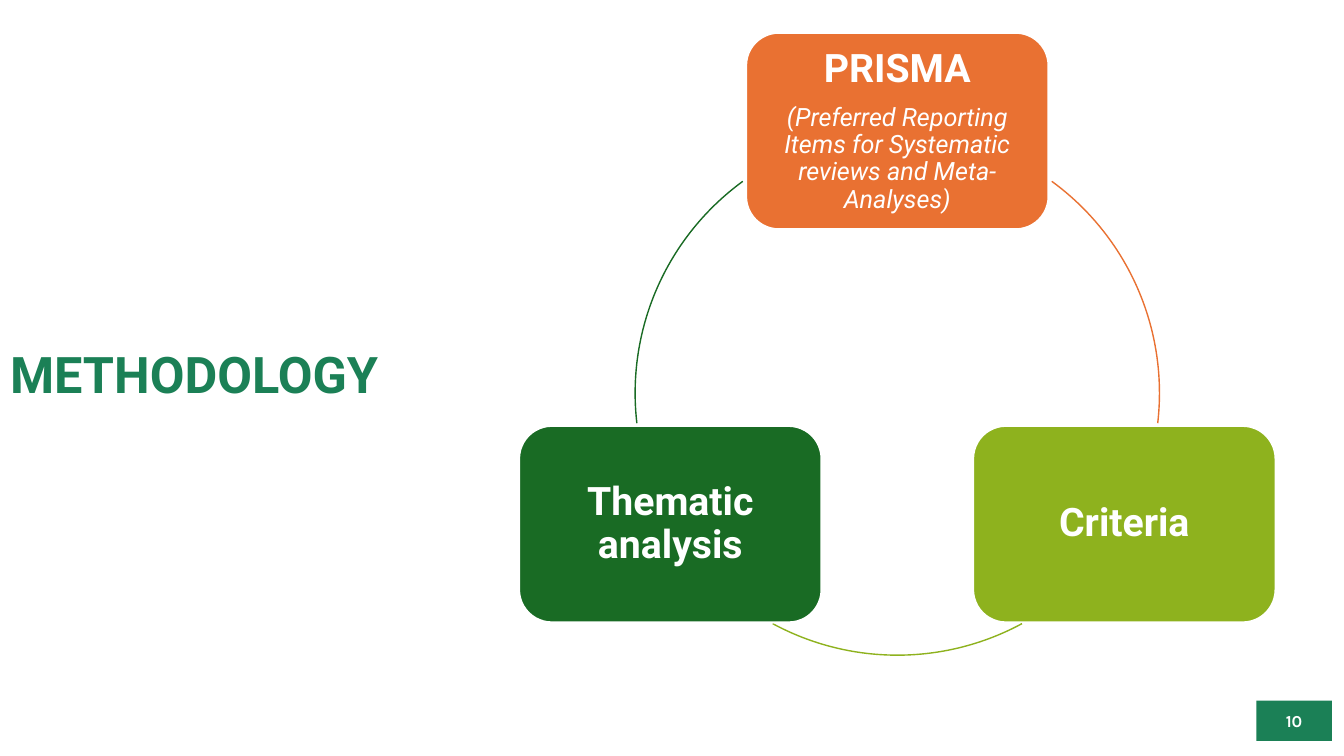
import math

from pptx import Presentation
from pptx.dml.color import RGBColor
from pptx.enum import shapes, text
from pptx.util import Inches, Pt

WHITE = RGBColor(0xFF, 0xFF, 0xFF)
TEAL = RGBColor(0x1B, 0x80, 0x56)
ORANGE = RGBColor(0xE9, 0x71, 0x32)
LIME = RGBColor(0x8E, 0xB2, 0x1E)
GREEN = RGBColor(0x19, 0x6B, 0x24)

CENTER_X, CENTER_Y, RADIUS = 8.9, 3.9, 2.6
STEP_WIDTH, STEP_HEIGHT = 3, 1.95

# Name, detail, colour, and start and end angle of the arc that follows.
STEPS = [
    ("PRISMA",
     "(Preferred Reporting Items for Systematic reviews and Meta-Analyses)",
     ORANGE, 306.1, 6.6),
    ("Criteria", None, LIME, 61.6, 118.4),
    ("Thematic analysis", None, GREEN, 173.4, 233.9),
]


def add_span(para, words, size, color, font="Roboto", bold=False, italic=False):
    span = para.add_run()
    span.text = words
    span.font.name = font
    span.font.size = Pt(size)
    span.font.bold = bold
    span.font.italic = italic
    span.font.color.rgb = color


def add_block(page, kind, left, top, width, height, color):
    """Add a filled shape whose text is centred both ways."""
    block = page.shapes.add_shape(
        kind, Inches(left), Inches(top), Inches(width), Inches(height))
    block.shadow.inherit = False
    block.fill.solid()
    block.fill.fore_color.rgb = color
    block.line.fill.background()
    block.text_frame.word_wrap = True
    block.text_frame.vertical_anchor = text.MSO_ANCHOR.MIDDLE
    block.text_frame.paragraphs[0].alignment = text.PP_ALIGN.CENTER
    return block


def add_title(page, words):
    title = page.shapes.title
    title.left, title.top = Inches(0), Inches(2.65)
    title.width, title.height = Inches(4.72), Inches(2.19)
    frame = title.text_frame
    frame.auto_size = text.MSO_AUTO_SIZE.NONE
    frame.vertical_anchor = text.MSO_ANCHOR.MIDDLE
    para = frame.paragraphs[0]
    para.alignment = text.PP_ALIGN.LEFT
    para.line_spacing = 0.9
    add_span(para, words, 36, TEAL, bold=True)


def add_step(page, angle, name, detail, color):
    """Add a cycle step centred on the circle at the given angle."""
    middle_x = CENTER_X + RADIUS * math.cos(math.radians(angle))
    middle_y = CENTER_Y + RADIUS * math.sin(math.radians(angle))
    step = add_block(page, shapes.MSO_SHAPE.ROUNDED_RECTANGLE,
                     middle_x - STEP_WIDTH / 2, middle_y - STEP_HEIGHT / 2,
                     STEP_WIDTH, STEP_HEIGHT, color)
    step.line.color.rgb = WHITE
    step.line.width = Pt(1.5)
    frame = step.text_frame
    frame.margin_left = frame.margin_right = Inches(0.13)
    para = frame.paragraphs[0]
    para.line_spacing = 0.9
    add_span(para, name, 28, WHITE, bold=True)
    if detail:
        para.space_after = Pt(10)
        para = frame.add_paragraph()
        para.alignment = text.PP_ALIGN.CENTER
        para.line_spacing = 0.9
        add_span(para, detail, 18, WHITE, italic=True)


def add_arc(page, start, end, color):
    """Add a clockwise arc of the cycle circle, with angles in degrees."""
    arc = page.shapes.add_shape(
        shapes.MSO_SHAPE.ARC,
        Inches(CENTER_X - RADIUS), Inches(CENTER_Y - RADIUS),
        Inches(2 * RADIUS), Inches(2 * RADIUS))
    arc.shadow.inherit = False
    # An adjustment of 0.6 is one degree.
    arc.adjustments[0] = start * 0.6
    arc.adjustments[1] = end * 0.6
    arc.fill.background()
    arc.line.color.rgb = color
    arc.line.width = Pt(1)


def add_page_number(page, number):
    badge = add_block(page, shapes.MSO_SHAPE.RECTANGLE,
                      12.46, 6.95, 0.75, 0.4, TEAL)
    add_span(badge.text_frame.paragraphs[0], number, 12, WHITE,
             font="Karla", bold=True)


def main():
    deck = Presentation()
    deck.slide_width, deck.slide_height = Inches(13.33), Inches(7.5)
    page = deck.slides.add_slide(deck.slide_layouts.get_by_name("Title Only"))
    add_title(page, "METHODOLOGY")
    add_page_number(page, "10")
    for index, (name, detail, color, start, end) in enumerate(STEPS):
        add_step(page, -90 + index * 360 / len(STEPS), name, detail, color)
        add_arc(page, start, end, color)
    deck.save("out.pptx")


if __name__ == "__main__":
    main()
